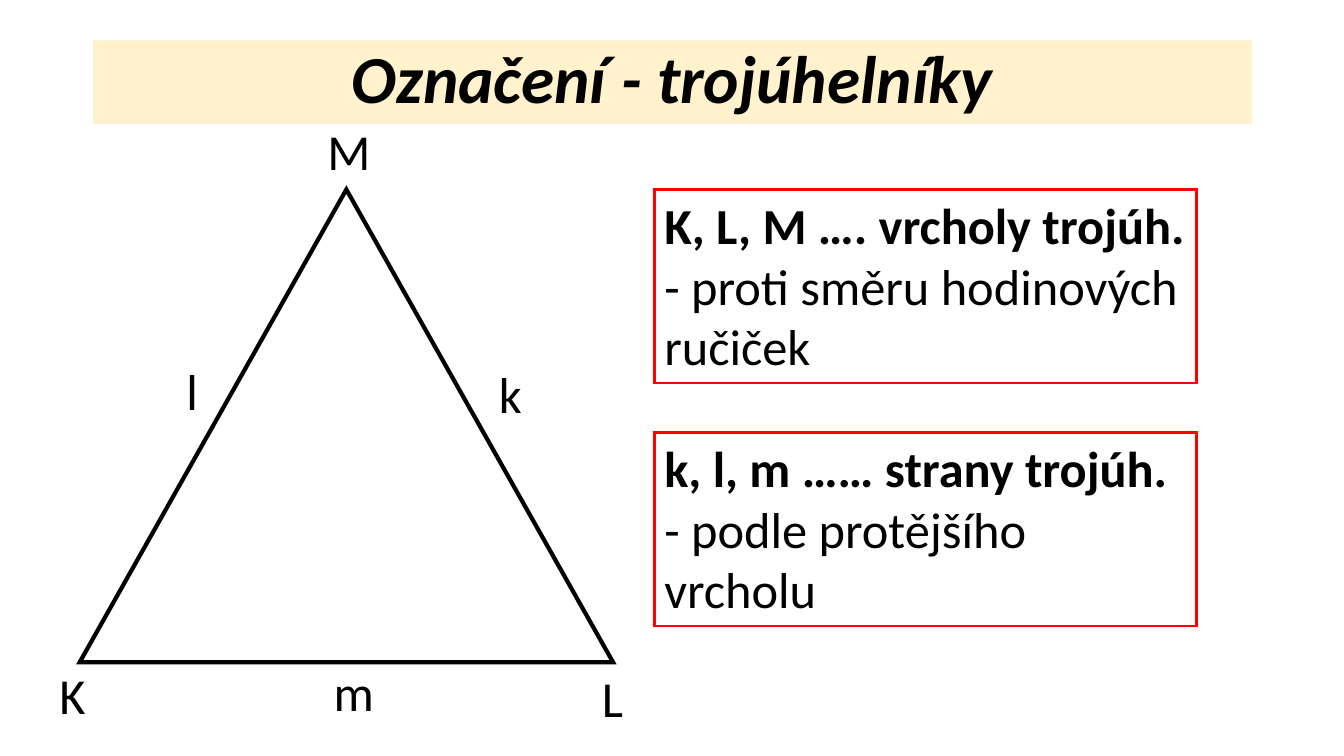
"""Build a slide that explains how triangle vertices and sides are labelled."""
from dataclasses import dataclass

from lxml.etree import SubElement
from pptx import Presentation
from pptx.dml.color import RGBColor
from pptx.enum.shapes import MSO_SHAPE
from pptx.enum.text import MSO_ANCHOR, MSO_AUTO_SIZE, PP_ALIGN
from pptx.oxml.ns import qn
from pptx.util import Pt

PX = 9144
SLIDE_SIZE = (1333, 750)

HEADING = "Označení - trojúhelníky"
HEADING_BOX = (92, 40, 1150, 83)
TRIANGLE_BOX = (79, 188, 529, 469)
LABELS = {
    "K": (49, 654, 46),
    "M": (315, 114, 63),
    "L": (587, 657, 41),
    "m": (321, 651, 61),
    "l": (175, 352, 32),
    "k": (485, 355, 43),
}
LABEL_HEIGHT = 71
RULES = [
    ("K, L, M …. vrcholy trojúh.", "- proti směru hodinových ručiček"),
    ("k, l, m …… strany trojúh.", "- podle protějšího vrcholu"),
]
RULE_BOX = (649, 188, 538, 192)
RULE_STEP = 241


@dataclass(frozen=True)
class Theme:
    font: str = "Calibri"
    heading_size: int = 48
    body_size: int = 36
    ink: RGBColor = RGBColor(0, 0, 0)
    band: RGBColor = RGBColor(0xFF, 0xF2, 0xCC)
    frame: RGBColor = RGBColor(0xFF, 0, 0)


THEME = Theme()


def emu(*lengths):
    return [length * PX for length in lengths]


def write(paragraph, text, size=THEME.body_size, bold=False, italic=False):
    run = paragraph.add_run()
    run.text = text
    run.font.name = THEME.font
    run.font.size = Pt(size)
    run.font.bold = bold
    run.font.italic = italic
    run.font.color.rgb = THEME.ink


def outline(shape, color, width):
    shape.line.color.rgb = color
    shape.line.width = Pt(width)
    SubElement(shape.line._get_or_add_ln(), qn("a:miter"), lim="800000")


def add_heading(slide):
    heading = slide.shapes.title
    heading.left, heading.top, heading.width, heading.height = emu(*HEADING_BOX)
    heading.fill.solid()
    heading.fill.fore_color.rgb = THEME.band
    frame = heading.text_frame
    frame.word_wrap = True
    frame.auto_size = MSO_AUTO_SIZE.NONE
    frame.vertical_anchor = MSO_ANCHOR.MIDDLE
    line = frame.paragraphs[0]
    line.alignment = PP_ALIGN.CENTER
    line.line_spacing = 0.9
    write(line, HEADING, THEME.heading_size, bold=True, italic=True)


def add_triangle(slide):
    triangle = slide.shapes.add_shape(
        MSO_SHAPE.ISOSCELES_TRIANGLE, *emu(*TRIANGLE_BOX))
    triangle.shadow.inherit = False
    triangle.fill.background()
    outline(triangle, THEME.ink, 3)


def add_label(slide, letter, left, top, width):
    label = slide.shapes.add_textbox(*emu(left, top, width, LABEL_HEIGHT))
    label.text_frame.word_wrap = False
    label.text_frame.auto_size = MSO_AUTO_SIZE.SHAPE_TO_FIT_TEXT
    write(label.text_frame.paragraphs[0], letter)


def add_rule(slide, index, term, meaning):
    left, top, width, height = RULE_BOX
    rule = slide.shapes.add_textbox(
        *emu(left, top + index * RULE_STEP, width, height))
    outline(rule, THEME.frame, 2)
    frame = rule.text_frame
    frame.word_wrap = True
    frame.auto_size = MSO_AUTO_SIZE.SHAPE_TO_FIT_TEXT
    write(frame.paragraphs[0], term, bold=True)
    write(frame.add_paragraph(), meaning)


def main():
    deck = Presentation()
    deck.slide_width, deck.slide_height = emu(*SLIDE_SIZE)
    slide = deck.slides.add_slide(deck.slide_layouts.get_by_name("Title Only"))
    add_heading(slide)
    add_triangle(slide)
    for letter, place in LABELS.items():
        add_label(slide, letter, *place)
    for index, (term, meaning) in enumerate(RULES):
        add_rule(slide, index, term, meaning)
    deck.save("out.pptx")


if __name__ == "__main__":
    main()
